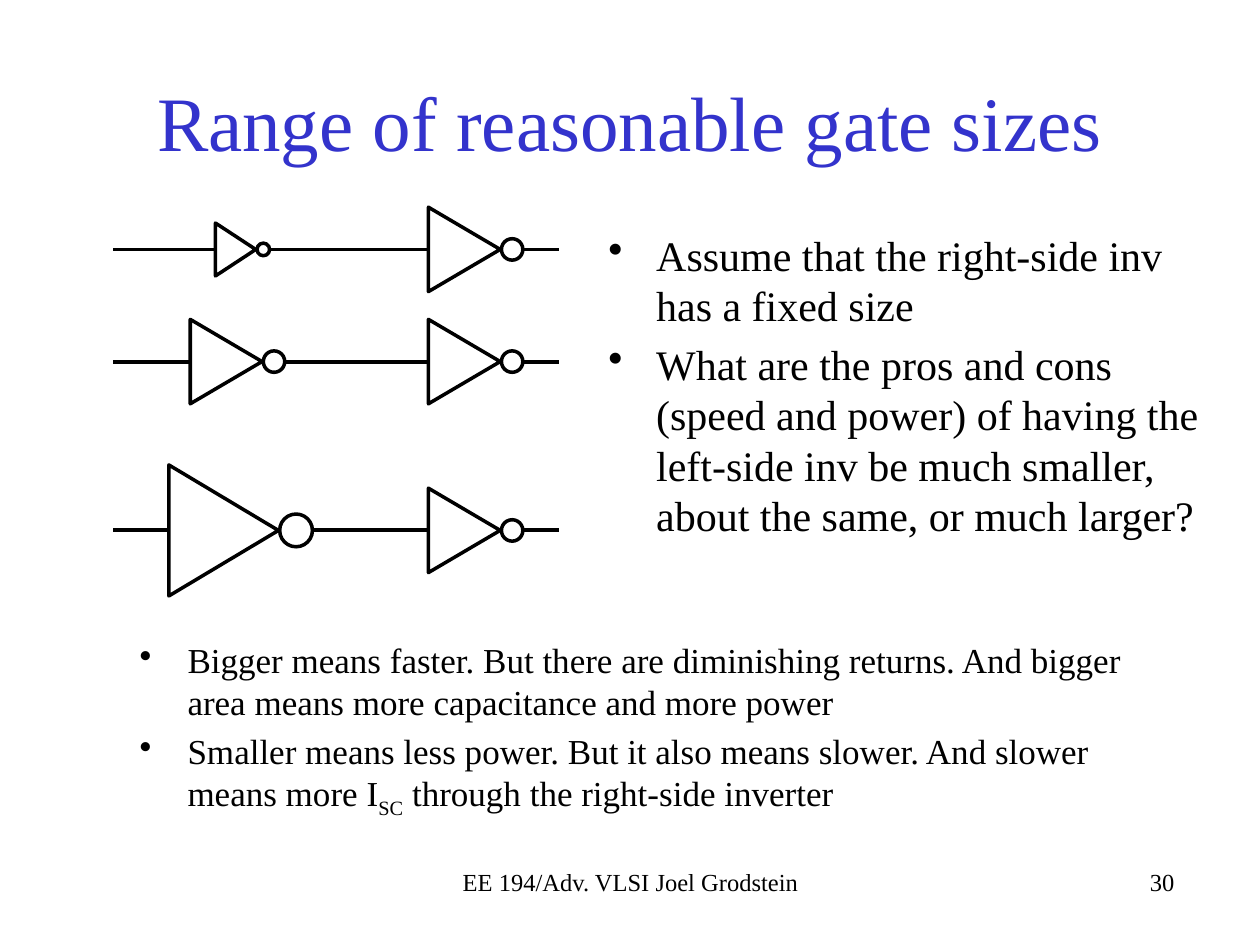
from pptx import Presentation
from pptx.dml.color import RGBColor
from pptx.enum.shapes import MSO_CONNECTOR as Link, MSO_SHAPE as Kind
from pptx.enum.text import MSO_ANCHOR as Anchor, PP_ALIGN as Align
from pptx.oxml.ns import qn
from pptx.util import Inches, Pt
from lxml.etree import SubElement

BLACK = RGBColor(0x00, 0x00, 0x00)
WHITE = RGBColor(0xFF, 0xFF, 0xFF)
BLUE = RGBColor(0x33, 0x33, 0xCC)

deck = Presentation()
deck.slide_width, deck.slide_height = Inches(10), Inches(7.5)
slide = deck.slides.add_slide(deck.slide_layouts[6])
shapes = slide.shapes


def add_text(box, paras, size, color=BLACK, align=Align.LEFT, anchor=Anchor.TOP, bullet=False):
    frame = shapes.add_textbox(*map(Inches, box)).text_frame
    frame.word_wrap = True
    frame.vertical_anchor = anchor
    for i, runs in enumerate(paras):
        para = frame.add_paragraph() if i else frame.paragraphs[0]
        para.alignment = align
        if bullet:
            para.space_before = Pt(size * 0.2)
            props = para._p.get_or_add_pPr()
            props.set("marL", str(Inches(0.38)))
            props.set("indent", str(-Inches(0.38)))
            SubElement(props, qn("a:buChar")).set("char", "•")
        for j, words in enumerate(runs):
            run = para.add_run()
            run.text = words
            look = {"name": "Times New Roman", "size": Pt(size)}
            for key, value in look.items():
                setattr(run.font, key, value)
            run.font.color.rgb = color
            if j == 1:
                run.font._element.set("baseline", "-25000")


def add_part(kind, mid, y, width, height, turn=0):
    part = shapes.add_shape(kind, Inches(mid - width / 2), Inches(y - height / 2),
                            Inches(width), Inches(height))
    part.rotation = turn
    part.shadow.inherit = False
    part.fill.solid()
    part.fill.fore_color.rgb = WHITE
    part.line.color.rgb = BLACK
    part.line.width = Pt(2)


add_text((0.75, 0.33, 8.5, 1.25), [["Range of reasonable gate sizes"]], 44,
         BLUE, Align.CENTER, Anchor.MIDDLE)
add_text((4.73, 1.77, 4.94, 2.71), [
    ["Assume that the right-side inv has a fixed size"],
    ["What are the pros and cons (speed and power) of having the left-side inv "
     "be much smaller, about the same, or much larger?"],
], 24, bullet=True)
add_text((1.01, 5.02, 7.99, 1.66), [
    ["Bigger means faster. But there are diminishing returns. "
     "And bigger area means more capacitance and more power"],
    ["Smaller means less power. But it also means slower. And slower means more I",
     "SC", " through the right-side inverter"],
], 20, bullet=True)
add_text((3.42, 6.83, 3.17, 0.5), [["EE 194/Adv. VLSI Joel Grodstein"]], 14, align=Align.CENTER)
add_text((6.25, 6.83, 3.17, 0.5), [["30"]], 14, align=Align.RIGHT)

small, same, large = (0.42, 0.32, 0.1), (0.67, 0.57, 0.17), (1.04, 0.87, 0.26)
rows = [(1.98, 1.71, small), (2.87, 1.51, same), (4.21, 1.34, large)]
for y, start, first in rows:
    wire = shapes.add_connector(Link.STRAIGHT, Inches(0.9), Inches(y), Inches(4.44), Inches(y))
    wire.line.color.rgb = BLACK
    wire.line.width = Pt(2.25)
    SubElement(wire._element.spPr, qn("a:effectLst"))
    for left, (tall, deep, dot) in ((start, first), (3.4, same)):
        add_part(Kind.ISOSCELES_TRIANGLE, left + deep / 2, y, tall, deep, 90)
        add_part(Kind.OVAL, left + deep + 0.01 + dot / 2, y, dot, dot)

deck.save("out.pptx")
